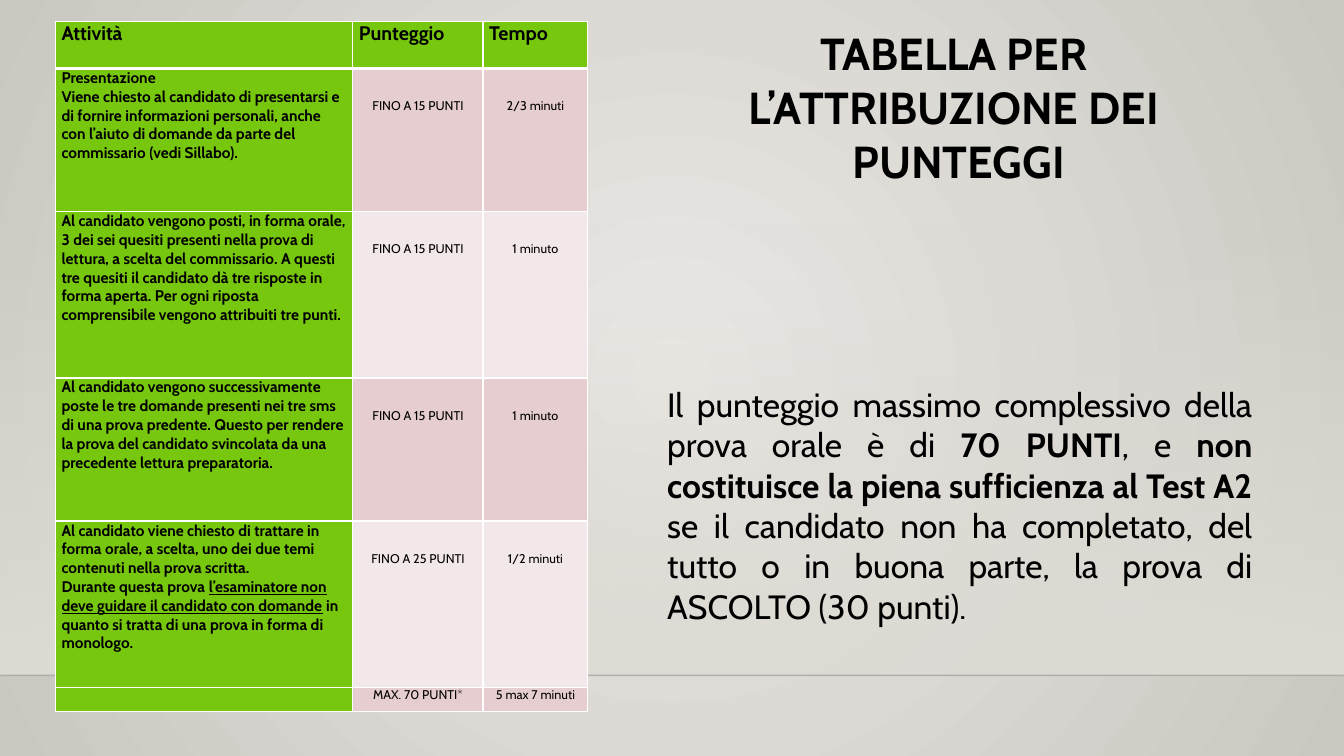
from dataclasses import dataclass

from lxml.etree import SubElement
from pptx import Presentation
from pptx.dml.color import RGBColor
from pptx.enum.shapes import MSO_CONNECTOR, MSO_SHAPE
from pptx.enum.text import MSO_ANCHOR, PP_ALIGN
from pptx.oxml import parse_xml
from pptx.oxml.ns import qn
from pptx.util import Inches, Pt

DRAWING_NS = "http://schemas.openxmlformats.org/drawingml/2006/main"


@dataclass(frozen=True)
class Theme:
    font: str = "Cabin"
    ink: str = "000000"
    rule: str = "000001"
    border: str = "FFFFFF"
    green: str = "78C70F"
    bands: tuple = ("E6CDCF", "F3E8E9")
    glow: tuple = ("ECEAE7", "CAC7C1")
    floor: str = "DFDBD5"
    title_size: int = 32
    body_size: int = 24
    header_size: int = 14
    activity_size: int = 11
    score_size: int = 9


def gradient(stops, direction):
    """Gradient fill from (position, colour, opacity) stops, all in percent."""
    stop_xml = "".join(
        f'<a:gs pos="{pos * 1000}"><a:srgbClr val="{colour}">'
        f'<a:alpha val="{opacity * 1000}"/></a:srgbClr></a:gs>'
        for pos, colour, opacity in stops)
    return parse_xml(f'<a:gradFill xmlns:a="{DRAWING_NS}" rotWithShape="1">'
                     f'<a:gsLst>{stop_xml}</a:gsLst>{direction}</a:gradFill>')


class SlideBuilder:
    """Places elements by percentages of the slide's width and height."""

    def __init__(self, deck, theme):
        self.deck, self.theme = deck, theme
        self.slide = deck.slides.add_slide(deck.slide_layouts[6])

    def x(self, share):
        return round(self.deck.slide_width * share / 100)

    def y(self, share):
        return round(self.deck.slide_height * share / 100)

    def area(self, left, top, width, height):
        return self.x(left), self.y(top), self.x(width), self.y(height)

    def background(self):
        fill = self.slide.background.fill
        fill.solid()
        fill.fore_color.rgb = RGBColor.from_string(self.theme.glow[0])
        inner, outer = self.theme.glow
        glow = gradient([(0, inner, 100), (100, outer, 100)],
                        '<a:path path="circle"><a:fillToRect l="50000" t="50000" '
                        'r="50000" b="50000"/></a:path>')
        solid = self.slide.element.find(".//" + qn("p:bgPr")).find(qn("a:solidFill"))
        solid.getparent().replace(solid, glow)

    def fade(self, area, colour):
        band = self.slide.shapes.add_shape(MSO_SHAPE.RECTANGLE, *self.area(*area))
        band.shadow.inherit = False
        band.line.fill.background()
        band.fill.solid()
        properties = band.element.spPr
        properties.replace(properties.find(qn("a:solidFill")),
                           gradient([(0, colour, 0), (100, colour, 100)],
                                    '<a:lin ang="5400000" scaled="0"/>'))

    def rule(self, top, colour, opacity):
        rule = self.slide.shapes.add_connector(
            MSO_CONNECTOR.STRAIGHT, 0, self.y(top), self.x(100), self.y(top))
        rule.line.width = Pt(1)
        rule.line.color.rgb = RGBColor.from_string(colour)
        properties = rule.element.spPr
        tint = properties.find(".//" + qn("a:srgbClr"))
        SubElement(tint, qn("a:alpha")).set("val", str(opacity * 1000))
        SubElement(properties, qn("a:effectLst"))

    def fill_text(self, frame, paragraphs, size, align, bold=False):
        """Each paragraph is a list of (text, extra format) runs."""
        for index, runs in enumerate(paragraphs):
            paragraph = frame.paragraphs[0] if index == 0 else frame.add_paragraph()
            paragraph.alignment = align
            for text, extra in runs:
                run = paragraph.add_run()
                run.text = text
                style = {"name": self.theme.font, "size": Pt(size), "bold": bold, **extra}
                for attribute, value in style.items():
                    setattr(run.font, attribute, value)
                run.font.color.rgb = RGBColor.from_string(self.theme.ink)

    def text(self, area, paragraphs, **style):
        frame = self.slide.shapes.add_textbox(*self.area(*area)).text_frame
        frame.word_wrap = True
        self.fill_text(frame, paragraphs, **style)

    def table(self, area, columns, rows):
        frame = self.slide.shapes.add_table(len(rows), len(columns), *self.area(*area))
        table = frame.table
        for flag in ("first_row", "horz_banding"):
            setattr(table, flag, False)
        for column, width in zip(table.columns, columns):
            column.width = self.x(width)
        for row, height in zip(table.rows, rows):
            row.height = self.y(height)
        return table

    def cell(self, cell, paragraphs, colour, top_gap=0, borders=(1, 1, 1, 1), **style):
        layout = {"margin_left": Inches(0.06), "margin_right": Inches(0.06),
                  "margin_top": self.y(top_gap), "margin_bottom": 0,
                  "vertical_anchor": MSO_ANCHOR.TOP}
        for attribute, value in layout.items():
            setattr(cell, attribute, value)
        properties = cell._tc.get_or_add_tcPr()
        for side, width in zip("LRTB", borders):
            line = SubElement(properties, qn(f"a:ln{side}"), w=str(Pt(width)))
            fill = SubElement(line, qn("a:solidFill"))
            SubElement(fill, qn("a:srgbClr"), val=self.theme.border)
        cell.fill.solid()
        cell.fill.fore_color.rgb = RGBColor.from_string(colour)
        self.fill_text(cell.text_frame, paragraphs, **style)
        if not paragraphs:  # keeps an empty cell as low as its row
            SubElement(cell.text_frame.paragraphs[0]._p, qn("a:endParaRPr"),
                       sz=str(style["size"] * 100))


def plain(*lines):
    return [[(line, {})] for line in lines]


HEADERS = ("Attività", "Punteggio", "Tempo")
ACTIVITIES = [
    (plain("Presentazione",
           "Viene chiesto al candidato di presentarsi e di fornire informazioni personali, "
           "anche con l’aiuto di domande da parte del commissario (vedi Sillabo)."),
     "FINO A 15 PUNTI", "2/3 minuti"),
    (plain("Al candidato vengono posti, in forma orale, 3 dei sei quesiti presenti nella "
           "prova di lettura, a scelta del commissario. A questi tre quesiti il candidato dà "
           "tre risposte in forma aperta. Per ogni riposta comprensibile vengono attribuiti "
           "tre punti."),
     "FINO A 15 PUNTI", "1 minuto"),
    (plain("Al candidato vengono successivamente poste le tre domande presenti nei tre sms di "
           "una prova predente. Questo per rendere la prova del candidato svincolata da una "
           "precedente lettura preparatoria."),
     "FINO A 15 PUNTI", "1 minuto"),
    (plain("Al candidato viene chiesto di trattare in forma orale, a scelta, uno dei due temi "
           "contenuti nella prova scritta.")
     + [[("Durante questa prova ", {}),
         ("l’esaminatore non deve guidare il candidato con domande", {"underline": True}),
         (" in quanto si tratta di una prova in forma di monologo.", {})]],
     "FINO A 25 PUNTI", "1/2 minuti"),
    ([], "MAX. 70 PUNTI*", "5 max 7 minuti"),
]
TITLE = plain("TABELLA PER ", "L’ATTRIBUZIONE DEI ", "PUNTEGGI")
SUMMARY = [[
    ("Il punteggio massimo complessivo della prova orale è di ", {}),
    ("70 PUNTI", {"bold": True}),
    (", e ", {}),
    ("non costituisce la piena sufficienza al Test A2", {"bold": True}),
    (" se il candidato non ha completato, del tutto o in buona parte, la prova di ASCOLTO "
     "(30 punti).", {}),
]]


def main():
    deck = Presentation()
    deck.slide_width, deck.slide_height = Inches(13.33), Inches(7.5)
    theme = Theme()
    page = SlideBuilder(deck, theme)

    # Backdrop
    page.background()
    page.fade((0, 29.47, 100, 59.86), theme.floor)
    page.rule(89.33, theme.rule, opacity=20)

    # Title
    page.text((47.49, 2.8, 47.71, 22.93), TITLE,
              size=theme.title_size, align=PP_ALIGN.CENTER, bold=True)

    # Score table: header row, then activities in alternating bands
    scores = page.table((4.13, 2.8, 39.61, 91.33), (22.13, 9.68, 7.8),
                        (6.27, 18.93, 22, 18.93, 22, 3.2))
    for column, header in enumerate(HEADERS):
        page.cell(scores.cell(0, column), plain(header), theme.green, borders=(1, 1, 1, 3),
                  size=theme.header_size, align=PP_ALIGN.JUSTIFY, bold=True)
    for row, (activity, *results) in enumerate(ACTIVITIES, start=1):
        borders = (1, 1, 3 if row == 1 else 1, 1)
        page.cell(scores.cell(row, 0), activity, theme.green, borders=borders,
                  size=theme.activity_size, align=PP_ALIGN.LEFT, bold=True)
        for column, result in enumerate(results, start=1):
            page.cell(scores.cell(row, column), plain(result), theme.bands[(row - 1) % 2],
                      top_gap=4 if activity else 0, borders=borders,
                      size=theme.score_size, align=PP_ALIGN.CENTER)

    # Summary
    page.text((48.91, 50.13, 45.01, 43.07), SUMMARY,
              size=theme.body_size, align=PP_ALIGN.JUSTIFY)

    deck.save("out.pptx")


if __name__ == "__main__":
    main()
